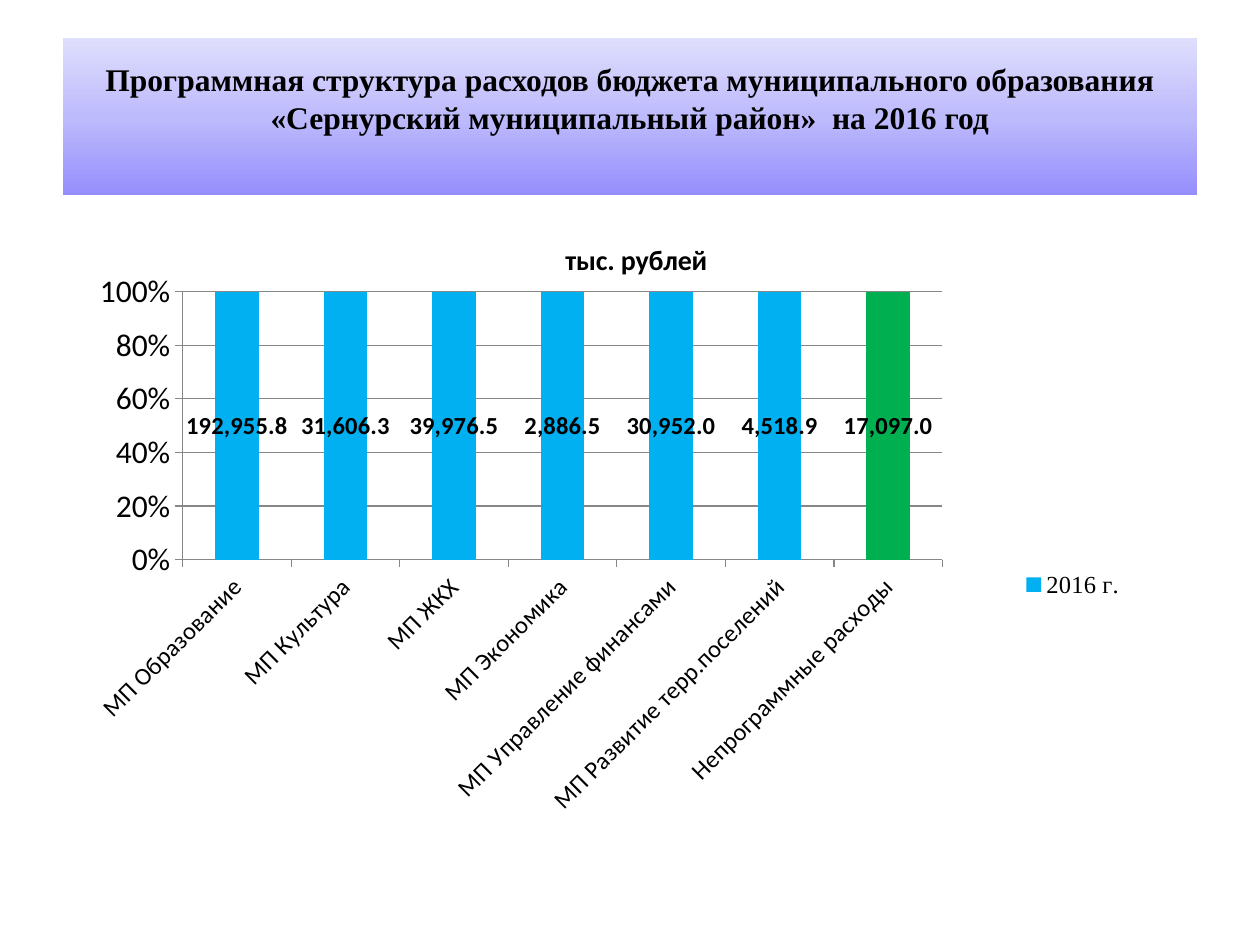
from copy import deepcopy

from lxml.etree import SubElement
from pptx import Presentation
from pptx.chart.data import CategoryChartData
from pptx.dml.color import RGBColor
from pptx.enum.chart import XL_CHART_TYPE, XL_LABEL_POSITION, XL_LEGEND_POSITION, XL_TICK_MARK
from pptx.enum.text import MSO_ANCHOR, PP_ALIGN
from pptx.oxml.ns import qn
from pptx.util import Pt

BLACK = RGBColor(0x00, 0x00, 0x00)
GRAY = RGBColor(0x87, 0x87, 0x87)
BLUE = RGBColor(0x00, 0xB0, 0xF0)
GREEN = RGBColor(0x00, 0xB0, 0x50)
BANNER_COLORS = [
    RGBColor(0x95, 0x8E, 0xFD),
    RGBColor(0xBE, 0xBB, 0xFC),
    RGBColor(0xDF, 0xDE, 0xFD),
]

TITLE = ("Программная структура расходов бюджета муниципального образования "
         "«Сернурский муниципальный район»  на 2016 год")
EXPENSES = {
    "МП Образование": 192955.8,
    "МП Культура": 31606.3,
    "МП ЖКХ": 39976.5,
    "МП Экономика": 2886.5,
    "МП Управление финансами": 30952.0,
    "МП Развитие терр.поселений": 4518.9,
    "Непрограммные расходы": 17097.0,
}
AMOUNT_FORMAT = "#,##0.0"


def set_font(font, size, name="Calibri", bold=False):
    """Format a font in black."""
    font.size = Pt(size)
    font.name = name
    font.bold = bold
    font.color.rgb = BLACK


def set_layout(element, index, left, top, width, height, inner=False):
    """Fix a chart part at fractions of the chart's size."""
    for old_layout in element.findall(qn("c:layout")):
        element.remove(old_layout)
    layout = element.makeelement(qn("c:layout"))
    element.insert(index, layout)
    manual = SubElement(layout, qn("c:manualLayout"))
    settings = [("layoutTarget", "inner")] if inner else []
    settings += [("xMode", "edge"), ("yMode", "edge"),
                 ("x", left), ("y", top), ("w", width), ("h", height)]
    for tag, value in settings:
        SubElement(manual, qn(f"c:{tag}")).set("val", str(value))


def fill_banner(shape):
    """Fill a shape with the three-colour vertical gradient."""
    shape.fill.gradient()
    shape.fill.gradient_angle = 90
    stop_list = shape._element.spPr.find(qn("a:gradFill")).find(qn("a:gsLst"))
    stop_list.insert(1, deepcopy(stop_list[0]))
    stops = shape.fill.gradient_stops
    for index, (stop, color) in enumerate(zip(stops, BANNER_COLORS)):
        stop.position = index / 2
        stop.color.rgb = color


def place_title(slide, left, top, width, height):
    """Place the heading banner in the given box."""
    title = slide.shapes.title
    title.left, title.top, title.width, title.height = left, top, width, height
    fill_banner(title)
    frame = title.text_frame
    frame.text = TITLE
    frame.word_wrap = True
    frame.vertical_anchor = MSO_ANCHOR.MIDDLE
    frame.margin_bottom = Pt(25)
    paragraph = frame.paragraphs[0]
    paragraph.alignment = PP_ALIGN.CENTER
    set_font(paragraph.font, 18, "Times New Roman", bold=True)


def format_axes(chart):
    """Format the percentage axis and the slanted category names."""
    for axis in (chart.category_axis, chart.value_axis):
        axis.major_tick_mark = XL_TICK_MARK.OUTSIDE
        axis.format.line.color.rgb = GRAY
    set_font(chart.category_axis.tick_labels.font, 14)
    text_properties = chart.category_axis._element.find(qn("c:txPr"))
    text_properties.find(qn("a:bodyPr")).set("rot", "-2700000")
    value_axis = chart.value_axis
    value_axis.has_major_gridlines = True
    value_axis.major_gridlines.format.line.color.rgb = GRAY
    value_axis.maximum_scale = 1
    value_axis.major_unit = 0.2
    set_font(value_axis.tick_labels.font, 18)
    value_axis.tick_labels.number_format = "0%"
    value_axis.tick_labels.number_format_is_linked = False


def format_columns(plot):
    """Colour the columns and label them with their amounts."""
    plot.gap_width = 150
    plot.overlap = 100
    plot.vary_by_categories = False
    series = plot.series[0]
    for part, color in ((series, BLUE), (series.points[len(EXPENSES) - 1], GREEN)):
        part.format.fill.solid()
        part.format.fill.fore_color.rgb = color
    labels = series.data_labels
    labels.show_value = True
    labels.position = XL_LABEL_POSITION.CENTER
    labels.number_format = AMOUNT_FORMAT
    labels.number_format_is_linked = False
    set_font(labels.font, 14, bold=True)


def place_chart(slide, left, top, width, height):
    """Place the chart of expenses in the given box."""
    data = CategoryChartData(number_format=AMOUNT_FORMAT)
    data.categories = list(EXPENSES)
    data.add_series("2016 г.", list(EXPENSES.values()))
    chart = slide.shapes.add_chart(
        XL_CHART_TYPE.COLUMN_STACKED_100, left, top, width, height, data).chart
    set_font(chart.font, 18)
    chart.has_title = True
    chart.chart_title.include_in_layout = False
    title_frame = chart.chart_title.text_frame
    title_frame.text = "тыс. рублей"
    set_font(title_frame.paragraphs[0].font, 16, bold=True)
    format_axes(chart)
    format_columns(chart.plots[0])
    chart.has_legend = True
    legend = chart.legend
    legend.position = XL_LEGEND_POSITION.RIGHT
    legend.include_in_layout = False
    set_font(legend.font, 14, "Times New Roman")
    set_layout(legend._element, 1, 0.82, 0.55, 0.13, 0.08)
    plot_area = chart._chartSpace.chart.plotArea
    set_layout(plot_area, 0, 0.1, 0.12, 0.67, 0.43, inner=True)


def main():
    """Build and save the presentation."""
    presentation = Presentation()
    presentation.slide_width, presentation.slide_height = Pt(720), Pt(540)
    slide = presentation.slides.add_slide(presentation.slide_layouts[5])
    place_title(slide, Pt(36), Pt(21.6), Pt(648), Pt(90))
    place_chart(slide, Pt(39.6), Pt(123.84), Pt(648), Pt(356.4))
    presentation.save("out.pptx")


if __name__ == "__main__":
    main()
